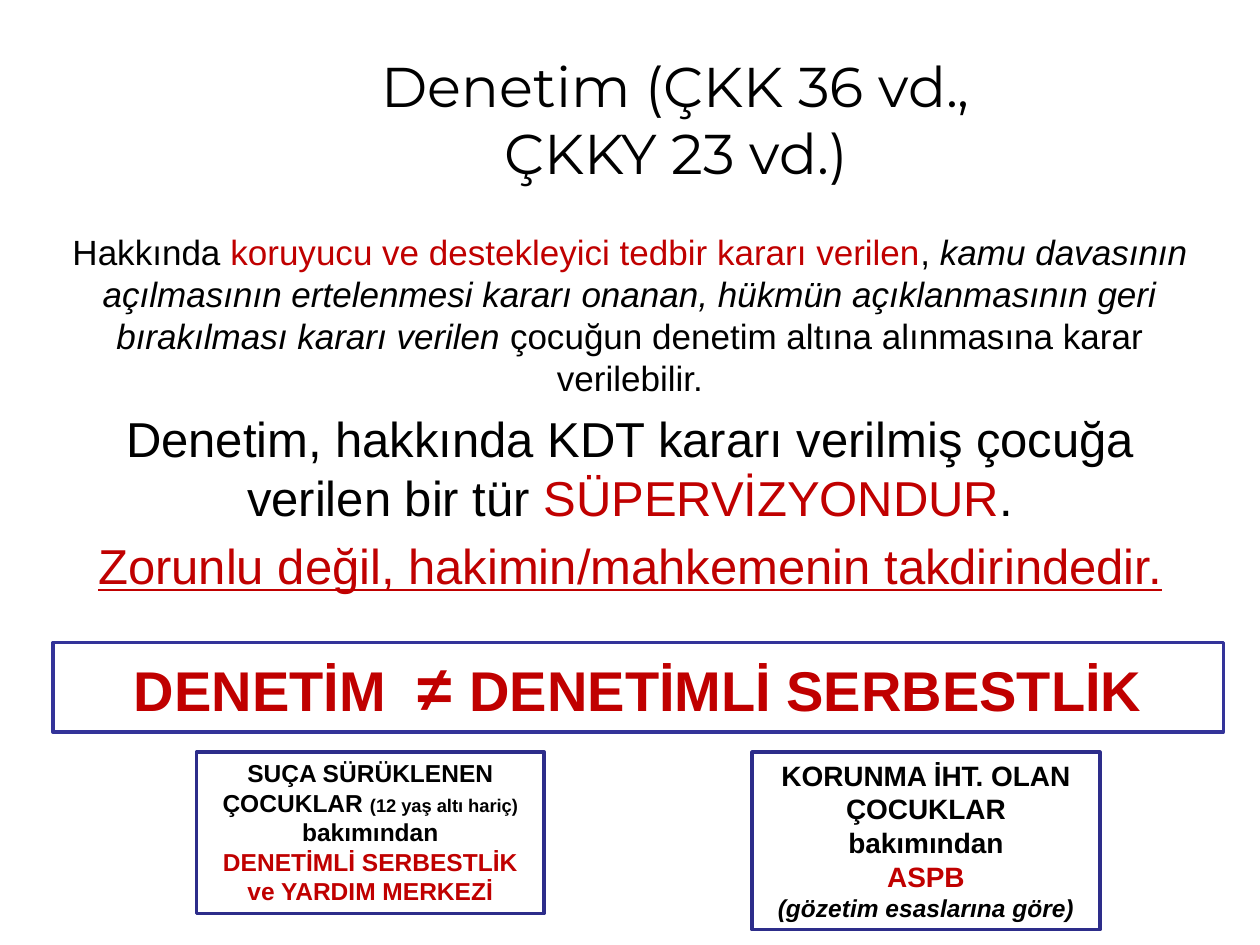
from pptx import Presentation
from pptx.dml.color import RGBColor
from pptx.enum.shapes import MSO_SHAPE
from pptx.enum.text import MSO_ANCHOR, MSO_AUTO_SIZE, PP_ALIGN
from pptx.util import Pt

BLACK = RGBColor(0x00, 0x00, 0x00)
WHITE = RGBColor(0xFF, 0xFF, 0xFF)
RED = RGBColor(0xC0, 0x00, 0x00)
INDIGO = RGBColor(0x33, 0x33, 0x99)
NAVY = RGBColor(0x2D, 0x2D, 0x8A)
RECTANGLE = MSO_SHAPE.RECTANGLE
CENTER = PP_ALIGN.CENTER
TOP = MSO_ANCHOR.TOP
GROW = MSO_AUTO_SIZE.SHAPE_TO_FIT_TEXT
FIXED = MSO_AUTO_SIZE.NONE


class SlideBuilder:
    """Hold the slide and its text style, and add each kind of element."""

    def __init__(self, slide, font_name="Arial"):
        self.slide = slide
        self.font_name = font_name

    def fill_text(self, shape, paragraphs, auto_size, font_name=None, bold=False, gap=0):
        frame = shape.text_frame
        frame.word_wrap = True
        frame.auto_size = auto_size
        frame.vertical_anchor = TOP
        for index, (size, color, runs) in enumerate(paragraphs):
            paragraph = frame.add_paragraph() if index else frame.paragraphs[0]
            paragraph.alignment = CENTER
            paragraph.space_before = Pt(gap if index else 0)
            font = paragraph.font
            font.name = font_name or self.font_name
            font.size = Pt(size)
            font.bold = bold
            font.color.rgb = color
            for text, changes in runs:
                self.add_run(paragraph, text, **changes)

    def add_run(self, paragraph, text, size=None, color=None, italic=None, underline=None):
        run = paragraph.add_run()
        run.text = text
        run.font.italic = italic
        run.font.underline = underline
        if size:
            run.font.size = Pt(size)
        if color:
            run.font.color.rgb = color

    def add_text(self, bounds, paragraphs, auto_size=GROW, font_name=None, gap=0):
        shape = self.slide.shapes.add_textbox(*map(Pt, bounds))
        self.fill_text(shape, paragraphs, auto_size, font_name, gap=gap)

    def add_framed_box(self, bounds, line_color, paragraphs):
        shape = self.slide.shapes.add_shape(RECTANGLE, *map(Pt, bounds))
        shape.shadow.inherit = False
        shape.fill.solid()
        shape.fill.fore_color.rgb = WHITE
        shape.line.color.rgb = line_color
        shape.line.width = Pt(2)
        self.fill_text(shape, paragraphs, GROW, bold=True)


def main():
    presentation = Presentation()
    presentation.slide_width = Pt(720)
    presentation.slide_height = Pt(540)
    slide = presentation.slides.add_slide(presentation.slide_layouts[6])
    builder = SlideBuilder(slide)

    builder.add_text((21.6, 128.2, 676.8, 362.9), [
        (20, BLACK, [
            ("Hakkında ", {}),
            ("koruyucu ve destekleyici tedbir kararı verilen", {"color": RED}),
            (", ", {}),
            ("kamu davasının açılmasının ertelenmesi kararı onanan, hükmün "
             "açıklanmasının geri bırakılması kararı verilen ", {"italic": True}),
            ("çocuğun denetim altına alınmasına karar verilebilir.", {}),
        ]),
        (28, BLACK, [
            ("Denetim, hakkında KDT kararı verilmiş çocuğa verilen bir tür ", {}),
            ("SÜPERVİZYONDUR", {"color": RED}),
            (".", {}),
        ]),
        (28, RED, [
            ("Zorunlu değil, hakimin/mahkemenin takdirindedir.", {"underline": True}),
        ]),
    ], auto_size=FIXED, gap=5.6)

    builder.add_framed_box((30.2, 367.2, 668.9, 51.1), INDIGO, [
        (32, RED, [
            ("DENETİM  ", {}),
            ("≠ ", {"size": 36}),
            ("DENETİMLİ SERBESTLİK", {}),
        ]),
    ])

    builder.add_framed_box((112.3, 429.8, 198.7, 92.2), NAVY, [
        (14, BLACK, [
            ("SUÇA SÜRÜKLENEN ÇOCUKLAR ", {}),
            ("(12 yaş altı hariç)", {"size": 10.5}),
        ]),
        (14, BLACK, [("bakımından", {})]),
        (14, RED, [("DENETİMLİ SERBESTLİK ve YARDIM MERKEZİ", {})]),
    ])

    builder.add_framed_box((429.8, 429.8, 198.7, 101.5), NAVY, [
        (16, BLACK, [("KORUNMA İHT. OLAN ÇOCUKLAR", {})]),
        (16, BLACK, [("bakımından", {})]),
        (16, RED, [("ASPB", {})]),
        (14, BLACK, [("(gözetim esaslarına göre)", {"italic": True})]),
    ])

    builder.add_text((187.9, 25.9, 396.7, 85), [
        (32, BLACK, [("Denetim (ÇKK 36 vd., ÇKKY 23 vd.)", {})]),
    ], font_name="Montserrat")

    presentation.save("out.pptx")


if __name__ == "__main__":
    main()
